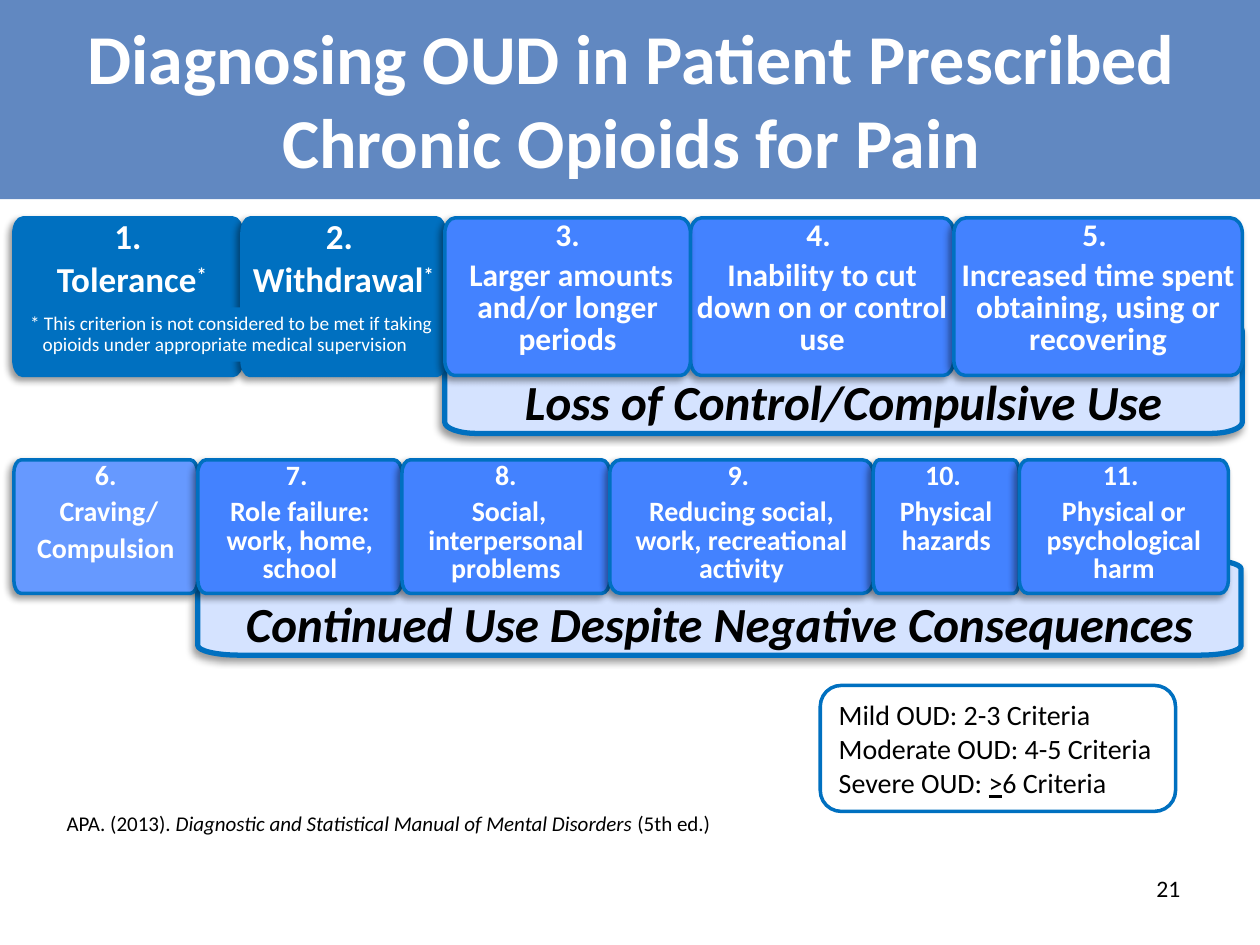
from dataclasses import dataclass
from itertools import pairwise
from lxml.etree import SubElement
from pptx import Presentation
from pptx.dml.color import RGBColor as RGB
from pptx.enum.shapes import MSO_SHAPE as SHAPE
from pptx.enum.text import MSO_ANCHOR as ANCHOR, PP_ALIGN as ALIGN
from pptx.oxml.ns import qn
from pptx.util import Inches, Pt


@dataclass(frozen=True)
class Theme:
    font: str = "Calibri"
    head: str = "6188C1"
    edge: str = "0070C0"
    deep: str = "0070C0"
    mid: str = "4382FF"
    soft: str = "6699FF"
    pale: str = "D5E3FF"
    white: str = "FFFFFF"
    black: str = "000000"
    title: float = 40
    band: float = 28
    big: float = 20
    large: float = 18
    body: float = 16
    page: float = 13.5
    cite: float = 12
    note: float = 11


T = Theme()


# Text: a line is a list of (words, style) runs
def add_run(para, words, size, color, style=""):
    run = para.add_run()
    run.text = words
    font = run.font
    font.name, font.size = T.font, Pt(size)
    font.color.rgb = RGB.from_string(color)
    font.bold, font.italic = "b" in style, "i" in style
    font.underline = "u" in style
    if "^" in style:
        font._element.set("baseline", "30000")


def write(shape, lines, size, color, align=ALIGN.LEFT, anchor=ANCHOR.TOP,
          inset=(0.1, 0.05), space=None, after=None):
    frame = shape.text_frame
    frame.word_wrap, frame.vertical_anchor = True, anchor
    frame.margin_left = frame.margin_right = Inches(inset[0])
    frame.margin_top = frame.margin_bottom = Inches(inset[1])
    for i, line in enumerate(lines):
        para = frame.add_paragraph() if i else frame.paragraphs[0]
        para.alignment, para.line_spacing = align, space
        if after:
            para.space_after = Pt(after)
        for words, style in line:
            add_run(para, words, size, color, style)


def add_text(slide, box, lines, size, color, **opts):
    shape = slide.shapes.add_textbox(*map(Inches, box))
    write(shape, lines, size, color, **opts)


# Shapes
def paint(shape, fill, width=0):
    shape.shadow.inherit = False
    shape.fill.solid()
    shape.fill.fore_color.rgb = RGB.from_string(fill)
    if width:
        shape.line.color.rgb = RGB.from_string(T.edge)
        shape.line.width = Pt(width)
    else:
        shape.line.fill.background()


def add_box(slide, kind, box, fill, width=0):
    shape = slide.shapes.add_shape(kind, *map(Inches, box))
    paint(shape, fill, width)
    return shape


def add_shadow(shape):
    effects = shape._element.spPr.find(qn("a:effectLst"))
    outer = SubElement(effects, qn("a:outerShdw"), blurRad=str(Pt(4)),
                       dist=str(Pt(3)), dir="8100000", algn="tr", rotWithShape="0")
    color = SubElement(outer, qn("a:srgbClr"), val=T.black)
    SubElement(color, qn("a:alpha"), val="40000")


def bend(shape):
    """Turn the first three of every four segments into one curve."""
    path = next(shape._element.iter(qn("a:path")))
    lines = path.findall(qn("a:lnTo"))
    for i in range(0, len(lines), 4):
        curve = SubElement(path, qn("a:cubicBezTo"))
        lines[i].addprevious(curve)
        for line in lines[i:i + 3]:
            curve.append(line[0])
            path.remove(line)


def add_panel(slide, box, fill, width):
    """Box whose corners are quarter ellipses, scaled to its sides."""
    left, top, wide, high = box
    right, base = left + wide, top + high
    rx, ry, pull = 0.04 * wide, 0.1 * high, 0.45
    # Corner, then the offsets at which its curve starts and ends
    turns = [((left, top), (0, ry), (rx, 0)),
             ((right, top), (-rx, 0), (0, ry)),
             ((right, base), (0, -ry), (-rx, 0)),
             ((left, base), (rx, 0), (0, -ry))]
    points = [(Inches(x + k * dx), Inches(y + k * dy))
              for (x, y), start, end in turns
              for (dx, dy), k in ((start, 1), (start, pull), (end, pull), (end, 1))]
    pen = slide.shapes.build_freeform(*points[0])
    pen.add_line_segments(points[1:] + points[:1], close=True)
    shape = pen.convert_to_shape()
    bend(shape)
    paint(shape, fill, width)
    add_shadow(shape)
    return shape


def add_card(slide, box, fill, size, lines):
    write(add_panel(slide, box, fill, 2), lines, size, T.white,
          align=ALIGN.CENTER, inset=(0.03, 0.02), space=0.85, after=4.5)


def add_band(slide, box, words):
    write(add_panel(slide, box, T.pale, 3), [[(words, "bi")]], T.band, T.black,
          align=ALIGN.CENTER, anchor=ANCHOR.BOTTOM, inset=(0.03, 0.02),
          space=0.85, after=4.5)


def bold(*lines):
    return [[(words, "b")] for words in lines]


def starred(number, word):
    return [[(number, "b")], [(word, "b"), ("*", "b^")]]


def add_row(slide, edges, top, high, cards, order):
    spans = list(pairwise(edges))
    for i in order:
        left, right = spans[i]
        add_card(slide, (left, top, right - left, high), *cards[i])


def main():
    deck = Presentation()
    deck.slide_width, deck.slide_height = Inches(10), Inches(7.5)
    slide = deck.slides.add_slide(deck.slide_layouts[6])

    # Header, page number and citation
    add_box(slide, SHAPE.RECTANGLE, (0, 0, 10, 1.58), T.head)
    add_text(slide, (9.08, 6.89, 0.75, 0.33), [[("21", "")]], T.page, T.black)
    add_text(slide, (0.51, 0.16, 9, 1.25),
             bold("Diagnosing OUD in Patient Prescribed Chronic Opioids for Pain"),
             T.title, T.white, align=ALIGN.CENTER, anchor=ANCHOR.MIDDLE,
             inset=(0.09, 0.05))
    add_text(slide, (0.43, 6.38, 6.23, 0.3),
             [[("APA. (2013). ", ""),
               ("Diagnostic and Statistical Manual of Mental Disorders", "i"),
               (" (5th ed.)", "")]], T.cite, T.black)

    # Criteria 1 to 5, with the note across the first two
    add_band(slide, (3.53, 2.54, 6.33, 0.9), "Loss of Control/Compulsive Use")
    upper = [
        (T.deep, T.big, starred("1.", " Tolerance")),
        (T.deep, T.big, starred("2. ", "Withdrawal")),
        (T.mid, T.large, bold("3.", " Larger amounts and/or longer periods")),
        (T.mid, T.large, bold("4. ", "Inability to cut down on or control use")),
        (T.mid, T.large,
         bold("5. ", "Increased time spent obtaining, using or recovering")),
    ]
    row = (slide, (0.11, 1.92, 3.53, 5.48, 7.57, 9.86), 1.73, 1.25, upper)
    add_row(*row, order=(0, 1, 3, 4))
    note = add_box(slide, SHAPE.RECTANGLE, (0.14, 2.44, 3.44, 0.43), T.deep)
    write(note, [[("* This criterion is not considered to be met if taking "
                   "opioids under appropriate medical supervision", "")]],
          T.note, T.white, space=0.9)
    props = note.text_frame.paragraphs[0]._p.get_or_add_pPr()
    props.set("marL", str(Inches(0.1)))
    props.set("indent", str(Inches(-0.1)))
    add_row(*row, order=(2,))

    # Criteria 6 to 11
    add_band(slide, (1.57, 4.44, 8.28, 0.76),
             "Continued Use Despite Negative Consequences")
    lower = [
        (T.soft, T.body, bold("6.", " Craving/", "Compulsion")),
        (T.mid, T.body, bold("7. ", "Role failure: work, home, school")),
        (T.mid, T.body, bold("8.", " Social, interpersonal problems")),
        (T.mid, T.body, bold("9. ", "Reducing social, work, recreational activity")),
        (T.mid, T.body, bold("10. ", "Physical hazards")),
        (T.mid, T.body, bold("11. ", "Physical or psychological harm")),
    ]
    add_row(slide, (0.11, 1.57, 3.19, 4.84, 6.93, 8.09, 9.75), 3.65, 1.06,
            lower, order=range(6))

    # Severity key
    key = add_box(slide, SHAPE.ROUNDED_RECTANGLE, (6.51, 5.44, 2.82, 1), T.white, 2)
    write(key, [[("Mild OUD: 2-3 Criteria", "")],
                [("Moderate OUD: 4-5 Criteria", "")],
                [("Severe OUD: ", ""), (">", "u"), ("6 Criteria", "")]],
          T.body, T.black, anchor=ANCHOR.MIDDLE)

    deck.save("out.pptx")


if __name__ == "__main__":
    main()
